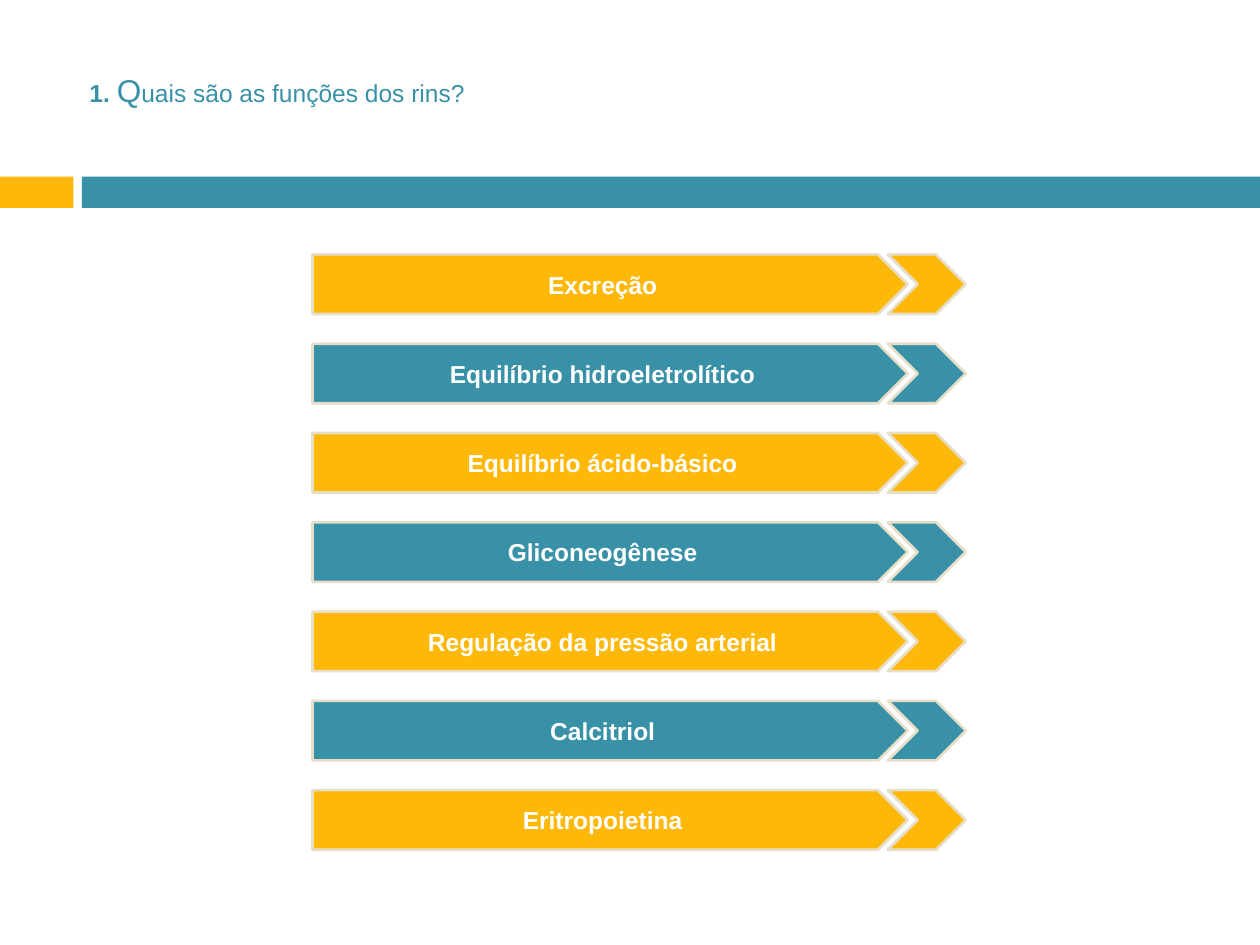
"""Builds a slide that lists the functions of the kidneys as a column of arrows."""
from dataclasses import dataclass

from pptx import Presentation
from pptx import util as u
from pptx.dml.color import RGBColor
from pptx.enum import shapes, text
from pptx.slide import Slide

GOLD, TEAL, SAND, WHITE = "FEB80A", "3891A7", "E7DEC9", "FFFFFF"
KIND = shapes.MSO_SHAPE


def paint(color, code):
    """Set a colour format from a hex string."""
    color.rgb = RGBColor.from_string(code)


@dataclass
class Painter:
    """Holds the style and the current slide."""

    slide: Slide
    face: str = "Arial"
    size: int = 14

    def style(self, font, code):
        """Set the face, size and colour of a font."""
        font.name, font.size = self.face, u.Pt(self.size)
        paint(font.color, code)

    def shape(self, kind, box, fill, edge=None):
        """Draw a filled preset shape, with an outline if edge is given."""
        item = self.slide.shapes.add_shape(kind, *map(u.Cm, box))
        item.shadow.inherit = False
        item.fill.solid()
        paint(item.fill.fore_color, fill)
        if edge:
            paint(item.line.color, edge)
            item.line.width = u.Pt(1.5)
        else:
            item.line.fill.background()
        return item

    def label(self, item, words):
        """Write bold white text in the middle of a shape."""
        frame = item.text_frame
        frame.vertical_anchor = text.MSO_ANCHOR.MIDDLE
        para = frame.paragraphs[0]
        para.text, para.alignment = words, text.PP_ALIGN.CENTER
        para.font.bold = True
        self.style(para.font, WHITE)

    def title(self, box, parts):
        """Write a centred heading from (words, size, bold) parts."""
        frame = self.slide.shapes.add_textbox(*map(u.Cm, box)).text_frame
        frame.word_wrap = True
        frame.auto_size = text.MSO_AUTO_SIZE.SHAPE_TO_FIT_TEXT
        para = frame.paragraphs[0]
        para.alignment = text.PP_ALIGN.CENTER
        for words, size, bold in parts:
            run = para.add_run()
            run.text = words
            self.style(run.font, TEAL)
            run.font.size, run.font.bold = u.Pt(size), bold

    def arrow(self, top, words, fill):
        """Draw a labelled pentagon followed by a chevron."""
        body = self.shape(KIND.PENTAGON, (6.3, top, 12, 1.2), fill, SAND)
        self.label(body, words)
        self.shape(KIND.CHEVRON, (17.9, top, 1.57, 1.2), fill, SAND)


def main():
    """Build the slide and save it."""
    deck = Presentation()
    deck.slide_width, deck.slide_height = u.Cm(25.4), u.Cm(19.05)
    pen = Painter(deck.slides.add_slide(deck.slide_layouts[6]))

    pen.shape(KIND.RECTANGLE, (0, 3.56, 1.48, 0.63), GOLD)
    pen.shape(KIND.RECTANGLE, (1.65, 3.56, 23.75, 0.63), TEAL)
    pen.title((0.89, 1.3, 9.4, 1.02), [
        ("1. ", 14, True),
        ("Q", 18, False),
        ("uais são as funções dos rins?", 14, False),
    ])

    roles = ["Excreção", "Equilíbrio hidroeletrolítico", "Equilíbrio ácido-básico",
             "Gliconeogênese", "Regulação da pressão arterial", "Calcitriol",
             "Eritropoietina"]
    for row, role in enumerate(roles):
        pen.arrow(5.13 + 1.8 * row, role, (GOLD, TEAL)[row % 2])

    deck.save("out.pptx")


if __name__ == "__main__":
    main()
